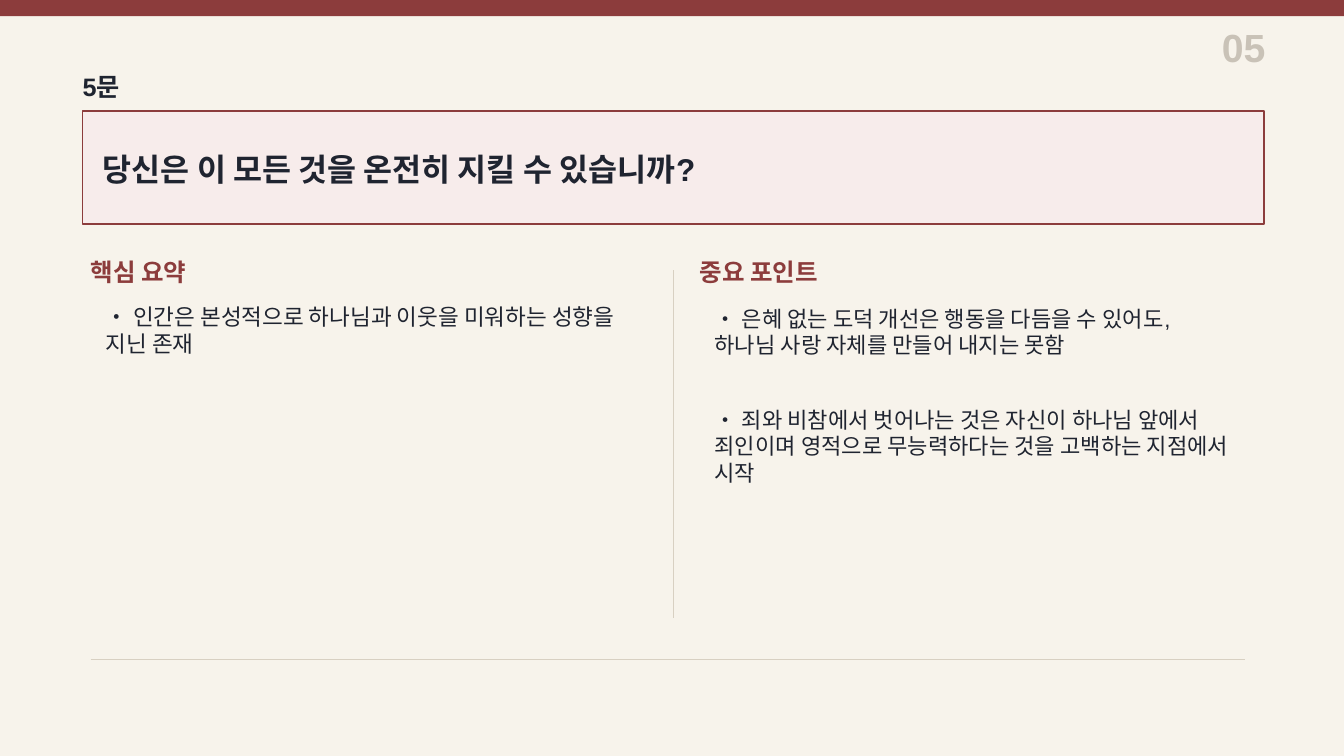
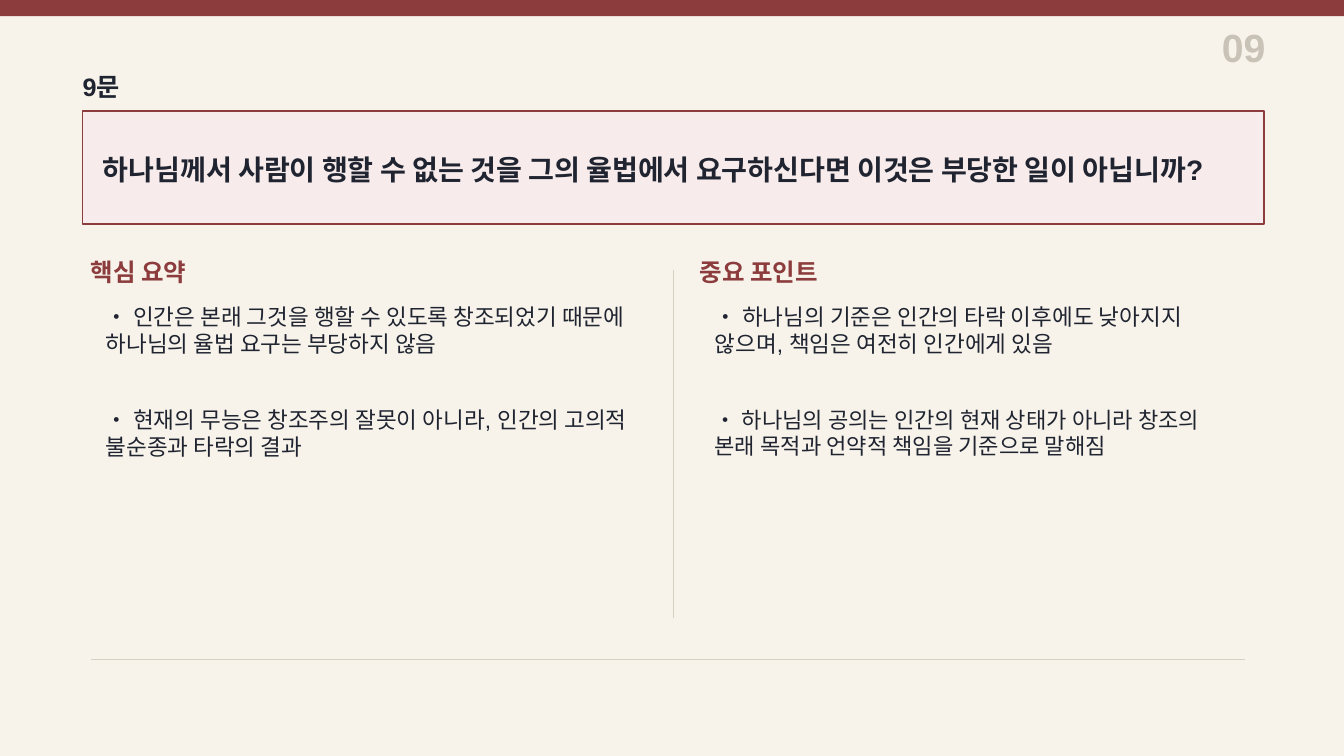
import dataclasses

import pptx
import pptx.dml.color
import pptx.enum.shapes
import pptx.enum.text
import pptx.oxml
import pptx.oxml.ns
import pptx.util

ALIGN = pptx.enum.text.PP_ALIGN
ANCHOR = pptx.enum.text.MSO_ANCHOR
RECT = pptx.enum.shapes.MSO_SHAPE.RECTANGLE
LINE = pptx.enum.shapes.MSO_CONNECTOR.STRAIGHT


@dataclasses.dataclass(frozen=True)
class Theme:
    font: str = "Arial"
    paper: str = "F7F3EB"
    wine: str = "8C3C3C"
    blush: str = "F7ECEB"
    ink: str = "1F2430"
    faint: str = "C9C2B7"
    rule: str = "D8D0C2"
    number: float = 28
    label: float = 18
    title: float = 17.5
    note: float = 16.1
    small: float = 15.8
    edge: float = 1.2
    hair: float = 1


@dataclasses.dataclass(frozen=True)
class Box:
    left: float
    top: float
    width: float
    height: float

    def inner(self, x, y, w, h):
        """Return an inner box; all four are percent of this box."""
        return Box(self.left + self.width * x / 100,
                   self.top + self.height * y / 100,
                   self.width * w / 100, self.height * h / 100)

    def emu(self):
        return [pptx.util.Inches(v) for v in
                (self.left, self.top, self.width, self.height)]


@dataclasses.dataclass(frozen=True)
class Note:
    text: str
    size: float = Theme.note
    drop: float = 0  # percent of the column height


THEME = Theme()
PAGE = Box(0, 0, 13.33, 7.5)
COLS = (6.75, 52.06)
TITLES = ("핵심 요약", "중요 포인트")


def color(code):
    return pptx.dml.color.RGBColor.from_string(code)


def add_text(slide, box, text, size, ink, bold=True, align=ALIGN.LEFT,
             anchor=ANCHOR.MIDDLE, inset=(0, 0)):
    frame = slide.shapes.add_textbox(*box.emu()).text_frame
    frame.word_wrap = True
    frame.vertical_anchor = anchor
    side, edge = map(pptx.util.Inches, inset)
    frame.margin_left = frame.margin_right = side
    frame.margin_top = frame.margin_bottom = edge
    frame.text = text
    para = frame.paragraphs[0]
    para.alignment = align
    font = para.runs[0].font
    font.name = THEME.font
    font.size = pptx.util.Pt(size)
    font.bold = bold
    font.color.rgb = color(ink)


def add_rect(slide, box, fill, line=None):
    shape = slide.shapes.add_shape(RECT, *box.emu())
    shape.shadow.inherit = False
    shape.fill.solid()
    shape.fill.fore_color.rgb = color(fill)
    if line:
        shape.line.color.rgb = color(line)
        shape.line.width = pptx.util.Pt(THEME.edge)
    else:
        shape.line.fill.background()


def add_rule(slide, box):
    """Draw a hairline from the top left to the bottom right of the box."""
    x, y, w, h = box.emu()
    rule = slide.shapes.add_connector(LINE, x, y, x + w, y + h)
    rule.line.color.rgb = color(THEME.rule)
    rule.line.width = pptx.util.Pt(THEME.hair)
    rule._element.spPr.append(pptx.oxml.parse_xml(
        f"<a:effectLst {pptx.oxml.ns.nsdecls('a')}/>"))


def draw_frame(slide, box):
    """Draw what all slides share: paper, top band and rules."""
    slide.background.fill.solid()
    slide.background.fill.fore_color.rgb = color(THEME.paper)
    add_rect(slide, box.inner(0, 0, 100, 2.13), THEME.wine)
    add_rule(slide, box.inner(50.11, 35.73, 0, 46))
    add_rule(slide, box.inner(6.75, 87.2, 85.9, 0))


def draw_head(slide, box, number):
    add_text(slide, box.inner(91.47, 0, 8.53, 64.1), f"{number:02}",
             THEME.number, THEME.faint, align=ALIGN.RIGHT)
    add_text(slide, box.inner(0, 64.1, 7.67, 35.9), f"{number}문",
             THEME.label, THEME.ink)


def draw_ask(slide, box, text, size):
    add_rect(slide, box, THEME.blush, THEME.wine)
    add_text(slide, box.inner(1.71, 21.43, 96.25, 60.71), text, size,
             THEME.ink)


def draw_notes(slide, box, title, notes):
    add_text(slide, box.inner(0, 0, 55, 6.76), title, THEME.title, THEME.wine)
    row = 28.73
    for i, note in enumerate(notes):
        cell = box.inner(0.92, 10.7 + i * row + note.drop, 99.08, row)
        add_text(slide, cell, f"• {note.text}", note.size, THEME.ink,
                 bold=False, anchor=ANCHOR.TOP, inset=(0.1, 0.05))


def build_slide(deck, number, ask, size, lists):
    slide = deck.slides.add_slide(deck.slide_layouts[6])
    draw_frame(slide, PAGE)
    draw_head(slide, PAGE.inner(6.15, 2.93, 88, 10.4), number)
    draw_ask(slide, PAGE.inner(6.15, 14.67, 87.92, 14.93), ask, size)
    for left, title, notes in zip(COLS, TITLES, lists):
        draw_notes(slide, PAGE.inner(left, 34.4, 40.74, 47.33), title, notes)


SLIDES = (
    (5, "당신은 이 모든 것을 온전히 지킬 수 있습니까?", 22.5, (
        (Note("인간은 본성적으로 하나님과 이웃을 미워하는 성향을 지닌 존재"),),
        (Note("은혜 없는 도덕 개선은 행동을 다듬을 수 있어도, "
              "하나님 사랑 자체를 만들어 내지는 못함", THEME.small, 0.56),
         Note("죄와 비참에서 벗어나는 것은 자신이 하나님 앞에서 죄인이며 "
              "영적으로 무능력하다는 것을 고백하는 지점에서 시작",
              THEME.small)))),
    (9, "하나님께서 사람이 행할 수 없는 것을 그의 율법에서 요구하신다면 "
        "이것은 부당한 일이 아닙니까?", 20.1, (
        (Note("인간은 본래 그것을 행할 수 있도록 창조되었기 때문에 "
              "하나님의 율법 요구는 부당하지 않음"),
         Note("현재의 무능은 창조주의 잘못이 아니라, "
              "인간의 고의적 불순종과 타락의 결과")),
        (Note("하나님의 기준은 인간의 타락 이후에도 낮아지지 않으며, "
              "책임은 여전히 인간에게 있음"),
         Note("하나님의 공의는 인간의 현재 상태가 아니라 창조의 "
              "본래 목적과 언약적 책임을 기준으로 말해짐", THEME.small)))),
)


def main():
    deck = pptx.Presentation()
    deck.slide_width = pptx.util.Inches(PAGE.width)
    deck.slide_height = pptx.util.Inches(PAGE.height)
    for item in SLIDES:
        build_slide(deck, *item)
    deck.save("out.pptx")


if __name__ == "__main__":
    main()
